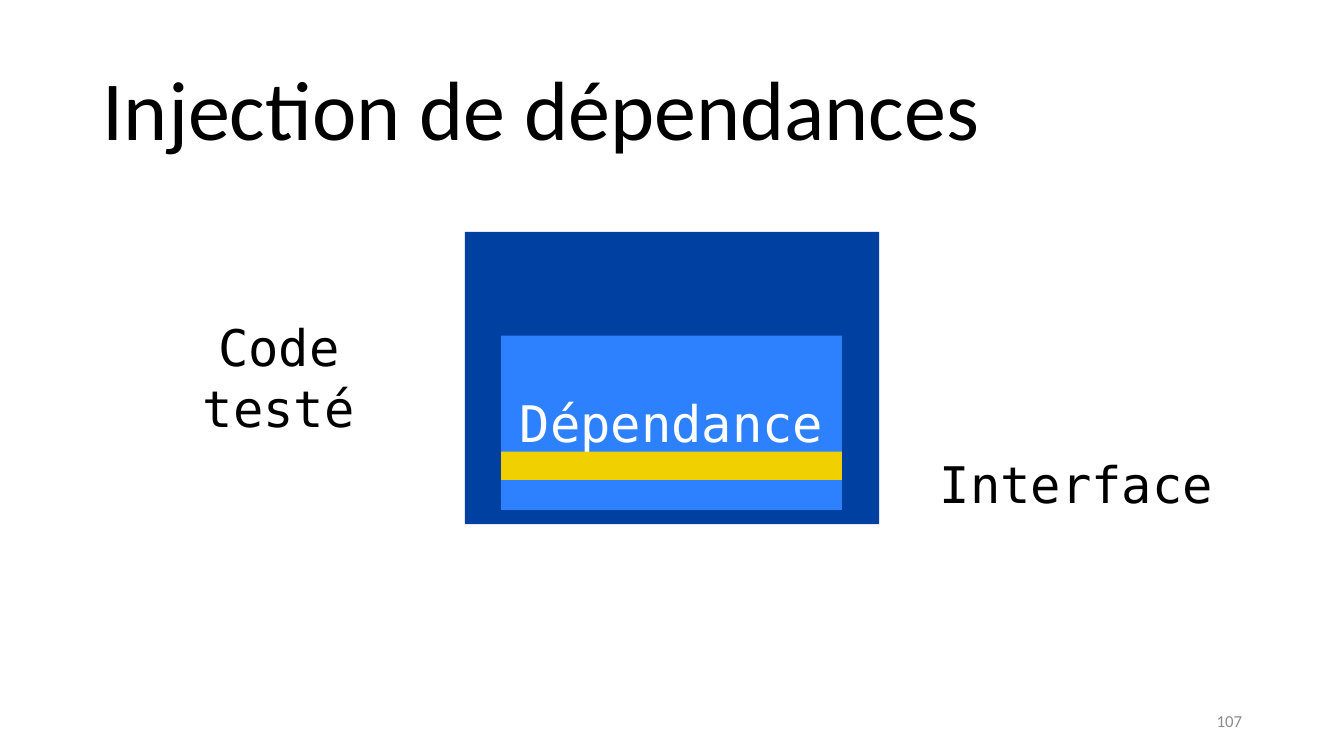
from pptx import Presentation, util as u
from pptx.dml.color import RGBColor
from pptx.enum import shapes, text

PX = 9144  # EMU per px, at 100 px to the inch
COLORS = {"black": "000000", "white": "FFFFFF", "grey": "8C8C8C",
          "navy": "0040A0", "blue": "2D81FF", "yellow": "F0D000"}
MONO = {"name": "DejaVu Sans Mono", "size": u.Pt(36)}
CENTER, RIGHT = text.PP_ALIGN.CENTER, text.PP_ALIGN.RIGHT
TOP, MIDDLE = text.MSO_ANCHOR.TOP, text.MSO_ANCHOR.MIDDLE

TITLE = ("Injection de dépendances", (92, 40, 1150, 145))
# left, top, width, height; fill; wording
BLOCKS = [
    ((461, 230, 411, 290), "navy", ""),
    ((497, 333, 338, 173), "blue", "Dépendance"),
    ((497, 448, 338, 28), "yellow", ""),
]
# wording; left, top, width, height; colour; alignment; anchor; font
LABELS = [
    ("107", (942, 695, 300, 40), "grey", RIGHT, MIDDLE,
     {"name": "Calibri", "size": u.Pt(12)}),
    ("Code\vtesté", (124, 309, 305, 131), "black", CENTER, TOP, MONO),
    ("Interface", (915, 445, 305, 71), "black", CENTER, TOP, MONO),
]


def emu(box):
    return [side * PX for side in box]


def write(shape, wording, color, align, anchor, font):
    frame = shape.text_frame
    frame.word_wrap = True
    frame.auto_size = text.MSO_AUTO_SIZE.NONE
    frame.vertical_anchor = anchor
    para = frame.paragraphs[0]
    para.text = wording
    para.alignment = align
    for span in para.runs:
        for key, value in font.items():
            setattr(span.font, key, value)
        span.font.color.rgb = RGBColor.from_string(COLORS[color])


deck = Presentation()
deck.slide_width, deck.slide_height = emu((1333, 750))
page = deck.slides.add_slide(deck.slide_layouts.get_by_name("Title Only"))

title = page.shapes.title
wording, box = TITLE
title.left, title.top, title.width, title.height = emu(box)
write(title, wording, "black", text.PP_ALIGN.LEFT, MIDDLE,
      {"name": "Calibri", "size": u.Pt(60)})
title.text_frame.paragraphs[0].line_spacing = 0.9

for box, fill, wording in BLOCKS:
    block = page.shapes.add_shape(shapes.MSO_SHAPE.RECTANGLE, *emu(box))
    block.shadow.inherit = False
    block.fill.solid()
    block.fill.fore_color.rgb = RGBColor.from_string(COLORS[fill])
    block.line.fill.background()
    if wording:
        write(block, wording, "white", CENTER, MIDDLE, MONO)

for wording, box, *style in LABELS:
    write(page.shapes.add_textbox(*emu(box)), wording, *style)

deck.save("out.pptx")
